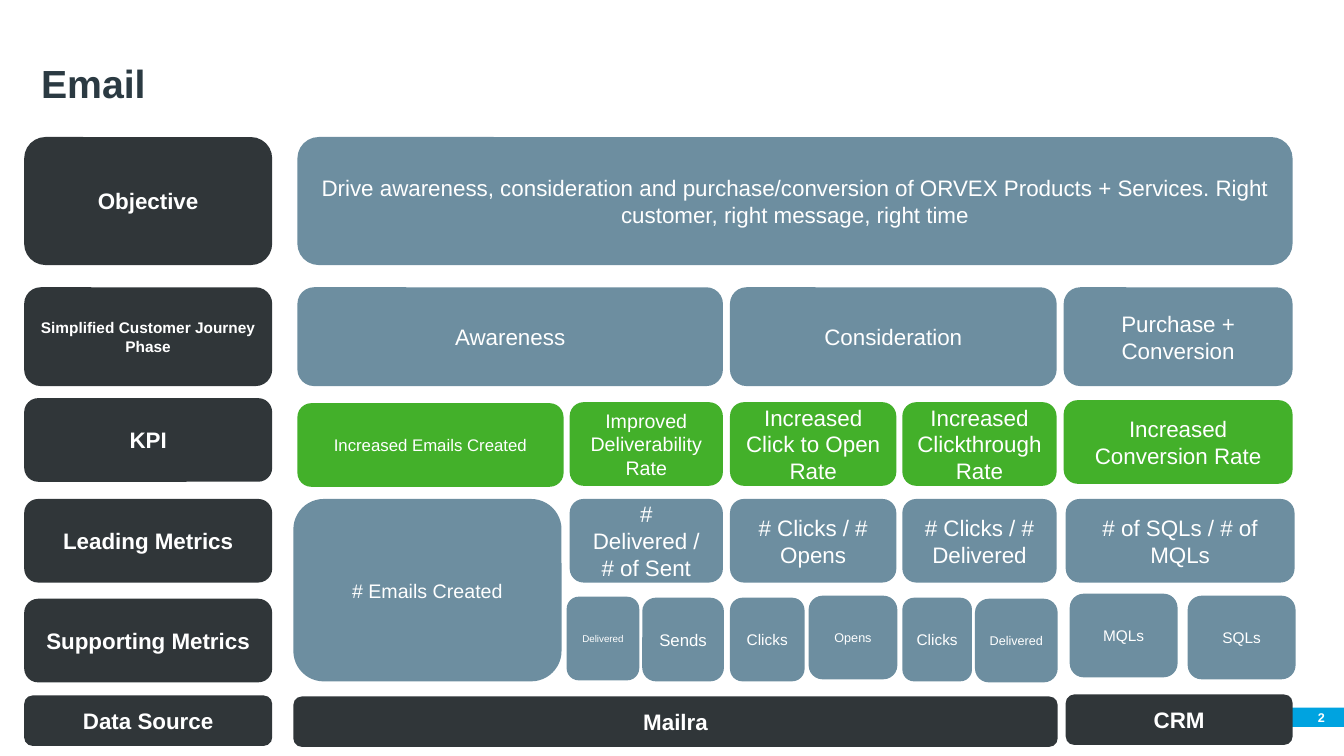
from pptx import Presentation, util as u
from pptx.dml.color import RGBColor
from pptx.enum import shapes, text

DARK, BLUE, GREEN, CYAN, WHITE, NAVY = (
    "303639", "6D8EA0", "43B02A", "00A3E0", "FFFFFF", "2B3A42")

# Grid rows: top, height
ROWS = {
    "objective": (1.36, 1.27),
    "phase": (2.85, 0.98),
    "kpi": (3.99, 0.83),
    "leading": (4.95, 0.83),
    "supporting": (5.93, 0.83),
    "source": (6.9, 0.5),
}
# Grid columns: left, right
COLUMNS = {
    "label": (0.24, 2.7),
    "created": (2.95, 5.59),
    "deliverability": (5.65, 7.17),
    "opening": (7.24, 8.89),
    "clickthrough": (8.95, 10.48),
    "conversion": (10.55, 12.82),
    # wider or shifted columns in the lower rows
    "emails": (2.91, 5.57),
    "leads": (10.57, 12.84),
    "crm": (10.57, 12.82),
    # halves of the columns for the supporting metrics
    "delivered": (5.62, 6.34),
    "sends": (6.37, 7.18),
    "open clicks": (7.24, 7.98),
    "opens": (8.02, 8.9),
    "through clicks": (8.95, 9.64),
    "through delivered": (9.67, 10.49),
    "mqls": (10.61, 11.68),
    "sqls": (11.78, 12.85),
}

# Row, wording, size, vertical nudge
LABELS = [
    ("objective", "Objective", 16, 0),
    ("phase", "Simplified Customer Journey Phase", 11, 0),
    ("kpi", "KPI", 16, -0.04),
    ("leading", "Leading Metrics", 16, 0),
    ("supporting", "Supporting Metrics", 16, 0.01),
    ("source", "Data Source", 16, 0),
]
# First row, last row, first column, last column, wording, size, vertical nudge
CELLS = [
    ("objective", "objective", "created", "conversion",
     "Drive awareness, consideration and purchase/conversion of ORVEX "
     "Products + Services. Right customer, right message, right time", 16, 0),
    ("phase", "phase", "created", "deliverability", "Awareness", 16, 0),
    ("phase", "phase", "opening", "clickthrough", "Consideration", 16, 0),
    ("phase", "phase", "conversion", "conversion", "Purchase + Conversion", 16, 0),
    ("kpi", "kpi", "created", "created", "Increased Emails Created", 12, 0.01),
    ("kpi", "kpi", "deliverability", "deliverability",
     "Improved Deliverability Rate", 14, 0),
    ("kpi", "kpi", "opening", "opening", "Increased Click to Open Rate", 16, 0),
    ("kpi", "kpi", "clickthrough", "clickthrough",
     "Increased Clickthrough Rate", 16, 0),
    ("kpi", "kpi", "conversion", "conversion", "Increased Conversion Rate", 16, -0.02),
    ("leading", "supporting", "emails", "emails", "# Emails Created", 14, 0),
    ("leading", "leading", "deliverability", "deliverability",
     "# Delivered / # of Sent", 16, 0),
    ("leading", "leading", "opening", "opening", "# Clicks / # Opens", 16, 0),
    ("leading", "leading", "clickthrough", "clickthrough",
     "# Clicks / # Delivered", 16, 0),
    ("leading", "leading", "leads", "leads", "# of SQLs / # of MQLs", 16, 0),
    ("supporting", "supporting", "delivered", "delivered", "Delivered", 7, -0.01),
    ("supporting", "supporting", "sends", "sends", "Sends", 12, 0),
    ("supporting", "supporting", "open clicks", "open clicks", "Clicks", 11, 0),
    ("supporting", "supporting", "opens", "opens", "Opens", 9, -0.02),
    ("supporting", "supporting", "through clicks", "through clicks", "Clicks", 11, 0),
    ("supporting", "supporting", "through delivered", "through delivered",
     "Delivered", 9, 0.01),
    ("supporting", "supporting", "mqls", "mqls", "MQLs", 11, -0.04),
    ("supporting", "supporting", "sqls", "sqls", "SQLs", 11, -0.02),
    ("source", "source", "emails", "through delivered", "Mailra", 16, 0.01),
    ("source", "source", "crm", "crm", "CRM", 16, -0.01),
]
ROW_FILLS = {"kpi": GREEN, "source": DARK}

deck = Presentation()
deck.slide_width, deck.slide_height = u.Inches(13.33), u.Inches(7.5)
slide = deck.slides.add_slide(deck.slide_layouts[6])


def color(value):
    return RGBColor.from_string(value)


def write(holder, wording, size, ink=WHITE, bold=False,
          align=text.PP_ALIGN.CENTER, anchor=text.MSO_ANCHOR.MIDDLE):
    frame = holder.text_frame
    frame.word_wrap = True
    frame.vertical_anchor = anchor
    line = frame.paragraphs[0]
    line.alignment = align
    run = line.add_run()
    run.text = wording
    run.font.name, run.font.size, run.font.bold = "Arial", u.Pt(size), bold
    run.font.color.rgb = color(ink)
    return line


def block(kind, left, top, width, height, fill):
    panel = slide.shapes.add_shape(kind, *map(u.Inches, (left, top, width, height)))
    panel.shadow.inherit = False
    panel.fill.solid()
    panel.fill.fore_color.rgb = color(fill)
    panel.line.fill.background()
    return panel


def cell(first_row, last_row, first_col, last_col, wording, size, nudge):
    top = ROWS[first_row][0]
    bottom = sum(ROWS[last_row])
    left, right = COLUMNS[first_col][0], COLUMNS[last_col][1]
    fill = DARK if first_col == "label" else ROW_FILLS.get(first_row, BLUE)
    panel = block(shapes.MSO_SHAPE.ROUNDED_RECTANGLE, left, top + nudge,
                  right - left, bottom - top, fill)
    write(panel, wording, size, bold=fill == DARK)


# Page number tab
tab = block(shapes.MSO_SHAPE.RECTANGLE, 12.7, 7.02, 0.63, 0.19, CYAN)
tab_frame = tab.text_frame
tab_frame.margin_left = tab_frame.margin_top = tab_frame.margin_bottom = 0
tab_frame.margin_right = u.Inches(0.19)
write(tab, "2", 9, bold=True, align=text.PP_ALIGN.RIGHT)

# Title
title = slide.shapes.add_textbox(*map(u.Inches, (0.31, 0.27, 12.51, 0.84)))
heading = write(title, "Email", 28, NAVY, True,
                text.PP_ALIGN.LEFT, text.MSO_ANCHOR.BOTTOM)
heading.line_spacing = 0.9

# Row labels, then the grid
for row, wording, size, nudge in LABELS:
    cell(row, row, "label", "label", wording, size, nudge)
for entry in CELLS:
    cell(*entry)

deck.save("out.pptx")
